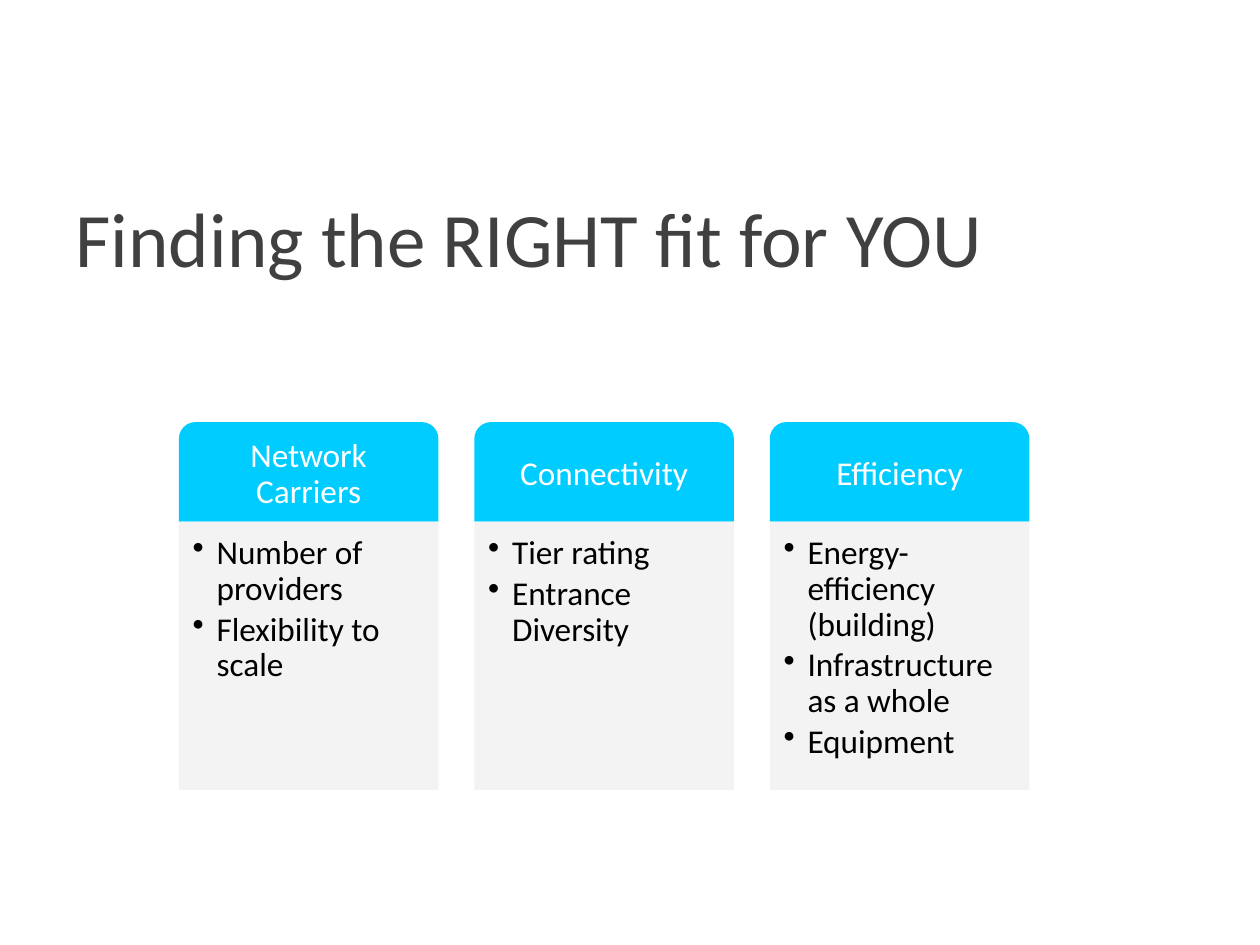
from dataclasses import dataclass

from lxml.etree import SubElement
from pptx import Presentation
from pptx.dml.color import RGBColor
from pptx.enum.shapes import MSO_SHAPE as Preset
from pptx.enum.text import MSO_ANCHOR as Anchor, MSO_AUTO_SIZE as AutoSize, PP_ALIGN as Align
from pptx.oxml.ns import qn
from pptx.util import Inches, Pt


@dataclass(frozen=True)
class Theme:
    font: str = "Calibri"
    title_size: float = 44
    body_size: float = 19
    title: str = "404040"
    header: str = "00CCFF"
    header_text: str = "FFFFFF"
    panel: str = "F2F2F2"
    panel_text: str = "000000"
    panel_opacity: int = 90


@dataclass(frozen=True)
class Grid:
    left: float = 1.42
    right: float = 8.17
    column: float = 2.06
    columns: int = 3
    top: float = 3.35
    header: float = 0.79
    panel: float = 2.13

    def x(self, index: int) -> float:
        pitch = (self.right - self.left - self.column) / (self.columns - 1)
        return self.left + index * pitch


@dataclass(frozen=True)
class Topic:
    heading: str
    points: tuple[str, ...]


THEME = Theme()
GRID = Grid()
TOPICS = (
    Topic("Network Carriers", ("Number of providers", "Flexibility to scale")),
    Topic("Connectivity", ("Tier rating", "Entrance Diversity")),
    Topic("Efficiency", ("Energy-efficiency (building)", "Infrastructure as a whole", "Equipment")),
)
SIDES = ("margin_left", "margin_top", "margin_right", "margin_bottom")
HEADER_FRAME = dict(zip(SIDES, map(Inches, (0.15, 0.08, 0.15, 0.08))),
                    word_wrap=True, vertical_anchor=Anchor.MIDDLE)
PANEL_FRAME = dict(zip(SIDES, map(Inches, (0.11, 0.11, 0.15, 0.17))),
                   word_wrap=True, vertical_anchor=Anchor.TOP)
TITLE_FRAME = dict(word_wrap=True, vertical_anchor=Anchor.MIDDLE, auto_size=AutoSize.NONE)
HEADER_PARAGRAPH = dict(alignment=Align.CENTER, line_spacing=0.9)
PANEL_PARAGRAPH = dict(alignment=Align.LEFT, line_spacing=0.9, level=1,
                       space_after=Pt(0.15 * THEME.body_size))


def apply(target, values: dict) -> None:
    for name, value in values.items():
        setattr(target, name, value)


def style_font(font, size: float, color: str) -> None:
    apply(font, dict(name=THEME.font, size=Pt(size)))
    font.color.rgb = RGBColor.from_string(color)


def add_bullet(paragraph) -> None:
    properties = paragraph._p.get_or_add_pPr()
    indent = Inches(0.19)
    properties.set("marL", str(indent))
    properties.set("indent", str(-indent))
    SubElement(properties, qn("a:buChar"), char="•")


def add_block(slide, preset, x: float, y: float, height: float, fill: str,
              lines: tuple[str, ...], color: str, frame_format: dict,
              paragraph_format: dict, bulleted: bool = False):
    block = slide.shapes.add_shape(preset, *map(Inches, (x, y, GRID.column, height)))
    block.shadow.inherit = False
    block.fill.solid()
    block.fill.fore_color.rgb = RGBColor.from_string(fill)
    block.line.fill.background()
    frame = block.text_frame
    apply(frame, frame_format)
    frame.text = "\n".join(lines)
    for paragraph in frame.paragraphs:
        if bulleted:
            add_bullet(paragraph)
        apply(paragraph, paragraph_format)
        style_font(paragraph.runs[0].font, THEME.body_size, color)
    return block


def add_topic(slide, index: int, topic: Topic) -> None:
    x = GRID.x(index)
    add_block(slide, Preset.ROUND_2_SAME_RECTANGLE, x, GRID.top, GRID.header, THEME.header,
              (topic.heading,), THEME.header_text, HEADER_FRAME, HEADER_PARAGRAPH)
    panel = add_block(slide, Preset.RECTANGLE, x, GRID.top + GRID.header, GRID.panel, THEME.panel,
                      topic.points, THEME.panel_text, PANEL_FRAME, PANEL_PARAGRAPH, bulleted=True)
    fill_color = panel._element.spPr.find(qn("a:solidFill"))[0]
    SubElement(fill_color, qn("a:alpha"), val=str(THEME.panel_opacity * 1000))


def add_title(slide, text: str, width: int, height: int) -> None:
    title = slide.shapes.title
    apply(title, dict(left=int(width / 20), top=int(height / 6),
                      width=int(width * 0.9), height=int(height / 6)))
    apply(title.text_frame, TITLE_FRAME)
    title.text_frame.text = text
    paragraph = title.text_frame.paragraphs[0]
    paragraph.alignment = Align.LEFT
    style_font(paragraph.runs[0].font, THEME.title_size, THEME.title)


def main() -> None:
    deck = Presentation()
    apply(deck, dict(slide_width=Inches(10), slide_height=Inches(7.5)))
    slide = deck.slides.add_slide(deck.slide_layouts.get_by_name("Title Only"))
    add_title(slide, "Finding the RIGHT fit for YOU", deck.slide_width, deck.slide_height)
    for index, topic in enumerate(TOPICS):
        add_topic(slide, index, topic)
    deck.save("out.pptx")


if __name__ == "__main__":
    main()
